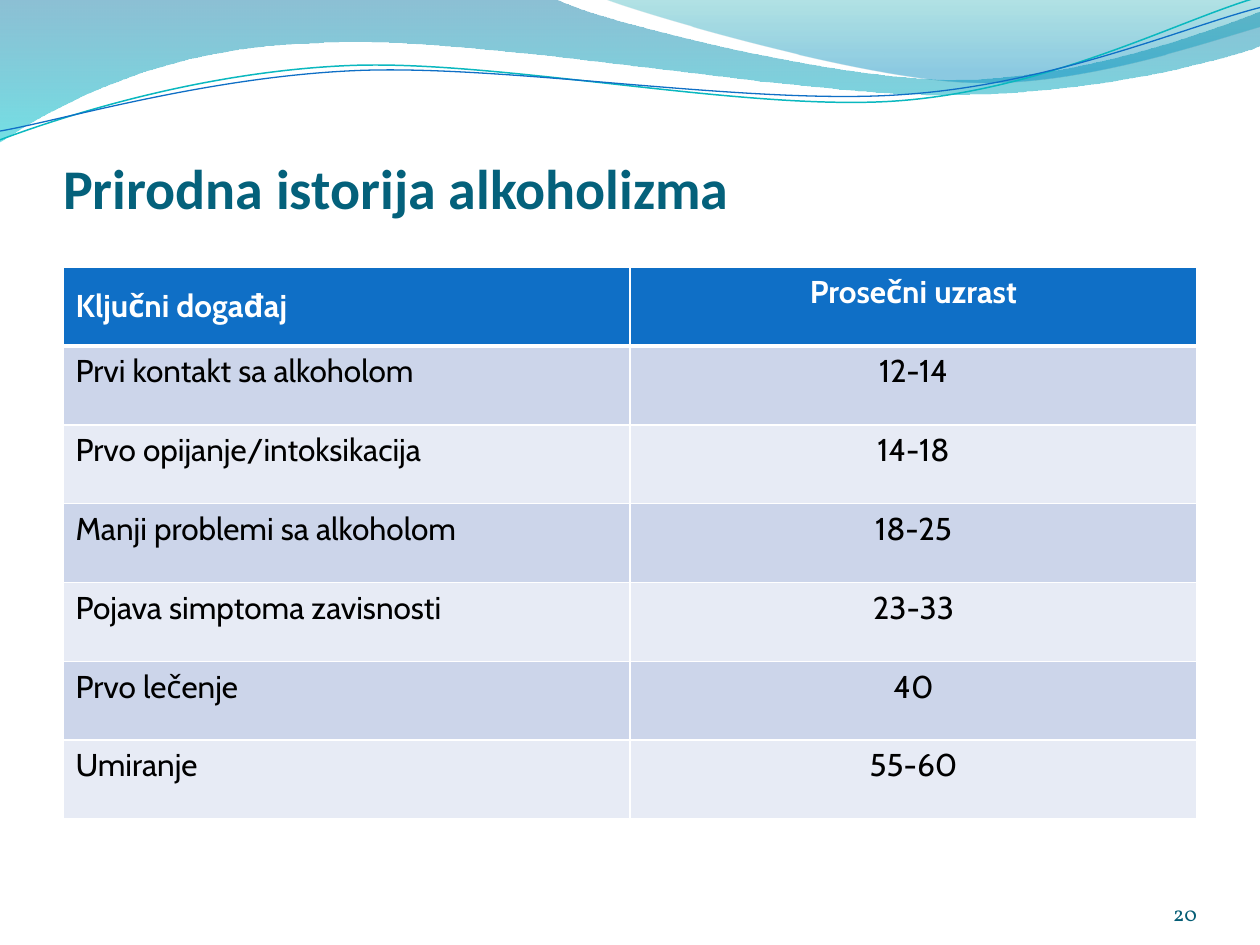
import math

from lxml import etree
from pptx import Presentation
from pptx.dml.color import RGBColor
from pptx.enum import text
from pptx.oxml.ns import qn
from pptx.util import Inches, Pt

WHITE = RGBColor(0xFF, 0xFF, 0xFF)
BLACK = RGBColor(0, 0, 0)
TITLE_TEAL = RGBColor(0x04, 0x61, 0x7B)
NUMBER_TEAL = RGBColor(0x04, 0x5D, 0x75)
BLUE = RGBColor(0x0F, 0x6F, 0xC6)
AQUA = RGBColor(0x0A, 0xB8, 0xBF)
BANDS = [RGBColor(0xCC, 0xD5, 0xEA), RGBColor(0xE7, 0xEB, 0xF5)]

# Wave outlines: one point is a straight step, three points a Bezier curve.
# Gradient stops: position, colour, opacity in percent.
WAVE_BANDS = [
    ([[(0, 0)], [(4.4, -0.01)], [(4.76, 0.17), (6.64, 0.63), (7.58, 0.63)],
      [(8.53, 0.63), (9.58, 0.26), (10, 0.09)], [(10.01, 0.36)],
      [(9.83, 0.44), (8.7, 0.76), (7.46, 0.75)],
      [(6.22, 0.75), (3.82, 0.28), (2.57, 0.34)],
      [(1.29, 0.36), (0.46, 0.83), (-0.01, 1.13)]],
     [(0, RGBColor(0x00, 0x74, 0xA1), 45), (1, RGBColor(0x00, 0xC6, 0xCF), 55)]),
    ([[(4.79, -0.01)], [(5.09, 0.11), (6.82, 0.62), (7.69, 0.65)],
      [(8.56, 0.69), (9.61, 0.32), (10, 0.21)], [(10, 0)]],
     [(0, RGBColor(0x00, 0xA1, 0xA9), 30), (0.8, RGBColor(0x00, 0x8B, 0xBF), 45)]),
]
WAVE_TILT = -2.7
WAVE_PIVOT = (4.99, 0.58)
WAVE_LINES = [
    ([[(0, 1.11)], [(0.48, 0.93), (1.58, 0.57), (2.77, 0.52)],
      [(3.95, 0.47), (5.93, 0.89), (7.13, 0.8)],
      [(8.33, 0.71), (9.38, 0.15), (9.98, -0.02)]], AQUA, 0.85),
    ([[(0, 1.04)], [(0.47, 0.96), (1.64, 0.61), (2.83, 0.56)],
      [(4.03, 0.51), (5.97, 0.84), (7.17, 0.75)],
      [(8.36, 0.67), (9.41, 0.21), (10, 0.06)]], BLUE, 0.75),
]
ROWS = [
    ("Ključni događaj", "Prosečni uzrast"),
    ("Prvi kontakt sa alkoholom", "12-14"),
    ("Prvo opijanje/intoksikacija", "14-18"),
    ("Manji problemi sa alkoholom", "18-25"),
    ("Pojava simptoma zavisnosti", "23-33"),
    ("Prvo lečenje", "40"),
    ("Umiranje", "55-60"),
]


def turn(point, degrees):
    """Turn a point clockwise about the middle of the wave lines."""
    angle = math.radians(degrees)
    dx, dy = point[0] - WAVE_PIVOT[0], point[1] - WAVE_PIVOT[1]
    return (WAVE_PIVOT[0] + dx * math.cos(angle) - dy * math.sin(angle),
            WAVE_PIVOT[1] + dx * math.sin(angle) + dy * math.cos(angle))


def add_outline(slide, outline, origin, close=False, tilt=0):
    left, top = origin
    points = [turn(point, -tilt) for part in outline for point in part]
    points = [(left + Inches(x), top + Inches(y)) for x, y in points]
    builder = slide.shapes.build_freeform(*points[0], scale=1.0)
    builder.add_line_segments(points[1:], close=close)
    shape = builder.convert_to_shape()
    shape.shadow.inherit = False
    shape.rotation = tilt
    # Join each run of three steps into one Bezier curve
    steps = iter(shape.element.xpath(".//a:lnTo"))
    for part in outline[1:]:
        part_steps = [next(steps) for _ in part]
        if len(part) == 3:
            curve = etree.Element(qn("a:cubicBezTo"))
            part_steps[0].addprevious(curve)
            for step in part_steps:
                curve.append(step[0])
                step.getparent().remove(step)
    return shape


def add_waves(slide, left, top):
    # Translucent bands
    for outline, stops in WAVE_BANDS:
        band = add_outline(slide, outline, (left, top), close=True)
        band.line.fill.background()
        band.fill.gradient()
        band.fill.gradient_angle = 270
        for stop, (position, color, _) in zip(band.fill.gradient_stops, stops):
            stop.position = position
            stop.color.rgb = color
        colors = band.element.xpath(".//a:gs/a:srgbClr")
        for color, (_, _, opacity) in zip(colors, stops):
            etree.SubElement(color, qn("a:alpha"), val=str(opacity * 1000))
    # Thin lines
    for outline, color, width in WAVE_LINES:
        line = add_outline(slide, outline, (left, top), tilt=WAVE_TILT)
        line.fill.background()
        line.line.color.rgb = color
        line.line.width = Pt(width)


def format_text(frame, value, size, font_name, color, bold=False, align=text.PP_ALIGN.LEFT):
    frame.text = value
    paragraph = frame.paragraphs[0]
    paragraph.alignment = align
    font = paragraph.font
    font.size, font.name, font.bold = Pt(size), font_name, bold
    font.color.rgb = color


def set_frame(frame, top_inset=0):
    frame.word_wrap = True
    frame.auto_size = text.MSO_AUTO_SIZE.NONE
    frame.vertical_anchor = text.MSO_ANCHOR.BOTTOM
    frame.margin_left = frame.margin_right = frame.margin_bottom = 0
    frame.margin_top = top_inset


def add_title(slide, left, top, width, height):
    title = slide.shapes.title
    title.left, title.top, title.width, title.height = left, top, width, height
    set_frame(title.text_frame, Inches(0.05))
    format_text(title.text_frame, "Prirodna istorija alkoholizma", 32, "Calibri",
                TITLE_TEAL, bold=True)


def set_borders(cell, bottom_width):
    properties = cell._tc.get_or_add_tcPr()
    for index, side in enumerate(("lnL", "lnR", "lnT", "lnB")):
        width = bottom_width if side == "lnB" else 1
        border = etree.Element(qn(f"a:{side}"), w=str(Pt(width)))
        fill = etree.SubElement(border, qn("a:solidFill"))
        etree.SubElement(fill, qn("a:srgbClr"), val=str(WHITE))
        properties.insert(index, border)


def add_age_table(slide, left, top, width, height):
    table = slide.shapes.add_table(len(ROWS), 2, left, top, width, height).table
    for row_index, row in enumerate(ROWS):
        header = row_index == 0
        table.rows[row_index].height = height // len(ROWS)
        for column_index, value in enumerate(row):
            cell = table.cell(row_index, column_index)
            cell.fill.solid()
            cell.fill.fore_color.rgb = BLUE if header else BANDS[(row_index - 1) % 2]
            align = text.PP_ALIGN.CENTER if column_index else text.PP_ALIGN.LEFT
            format_text(cell.text_frame, value, 18, "Cabin",
                        WHITE if header else BLACK, header, align)
            set_borders(cell, 3 if header else 1)
    table.cell(0, 0).vertical_anchor = text.MSO_ANCHOR.MIDDLE


def add_slide_number(slide, left, top, width, height):
    frame = slide.shapes.add_textbox(left, top, width, height).text_frame
    set_frame(frame)
    format_text(frame, "20", 12, "Vollkorn", NUMBER_TEAL, align=text.PP_ALIGN.RIGHT)


def main():
    presentation = Presentation()
    presentation.slide_width, presentation.slide_height = Inches(10), Inches(7.5)
    slide = presentation.slides.add_slide(presentation.slide_layouts[5])
    add_waves(slide, Inches(0), Inches(0))
    add_title(slide, Inches(0.5), Inches(0.77), Inches(9), Inches(0.98))
    # Keep the title in front of the waves
    slide.shapes.element.append(slide.shapes.title.element)
    add_age_table(slide, Inches(0.5), Inches(2.12), Inches(9), Inches(4.38))
    add_slide_number(slide, Inches(8.67), Inches(6.95), Inches(0.83), Inches(0.4))
    presentation.save("out.pptx")


if __name__ == "__main__":
    main()
